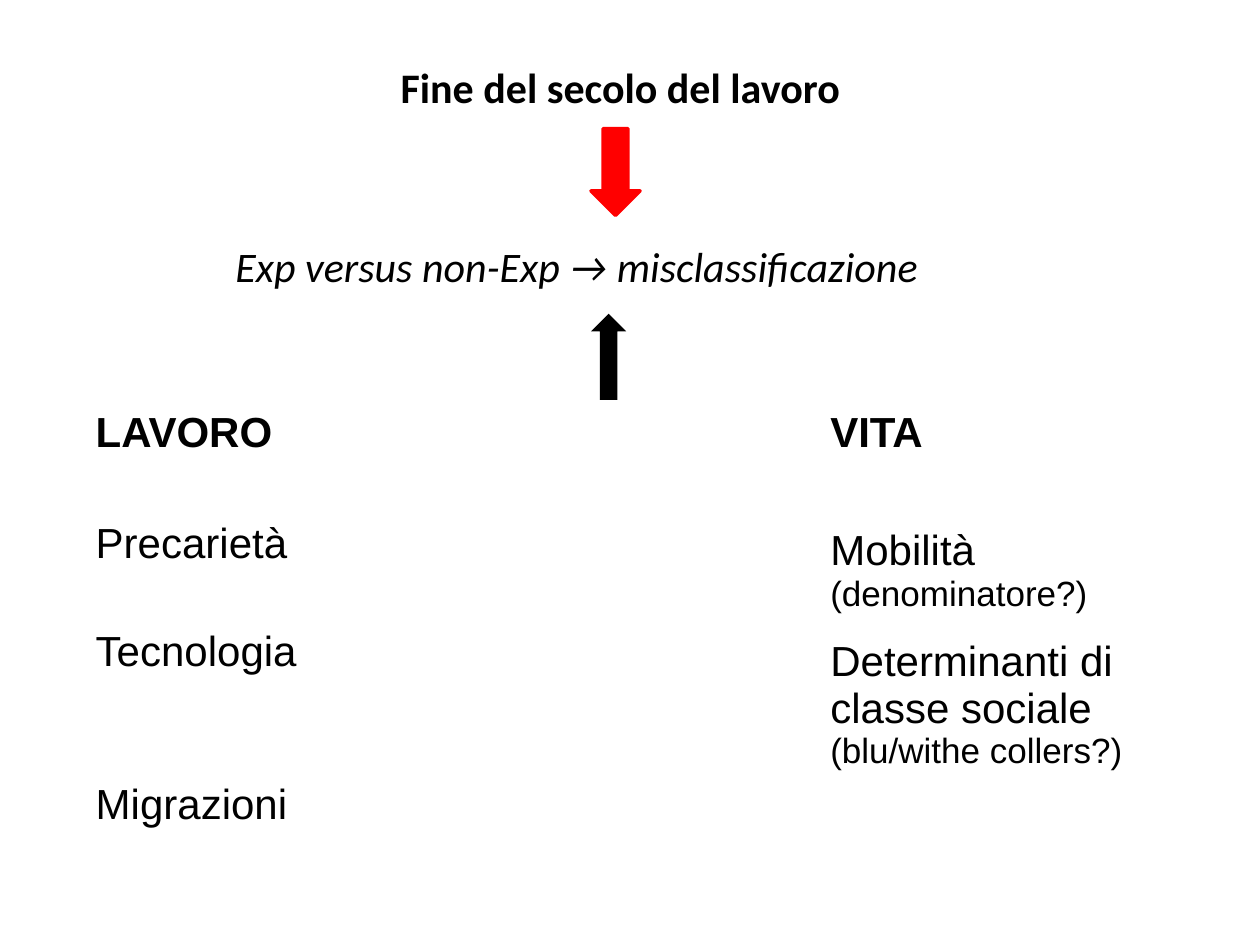
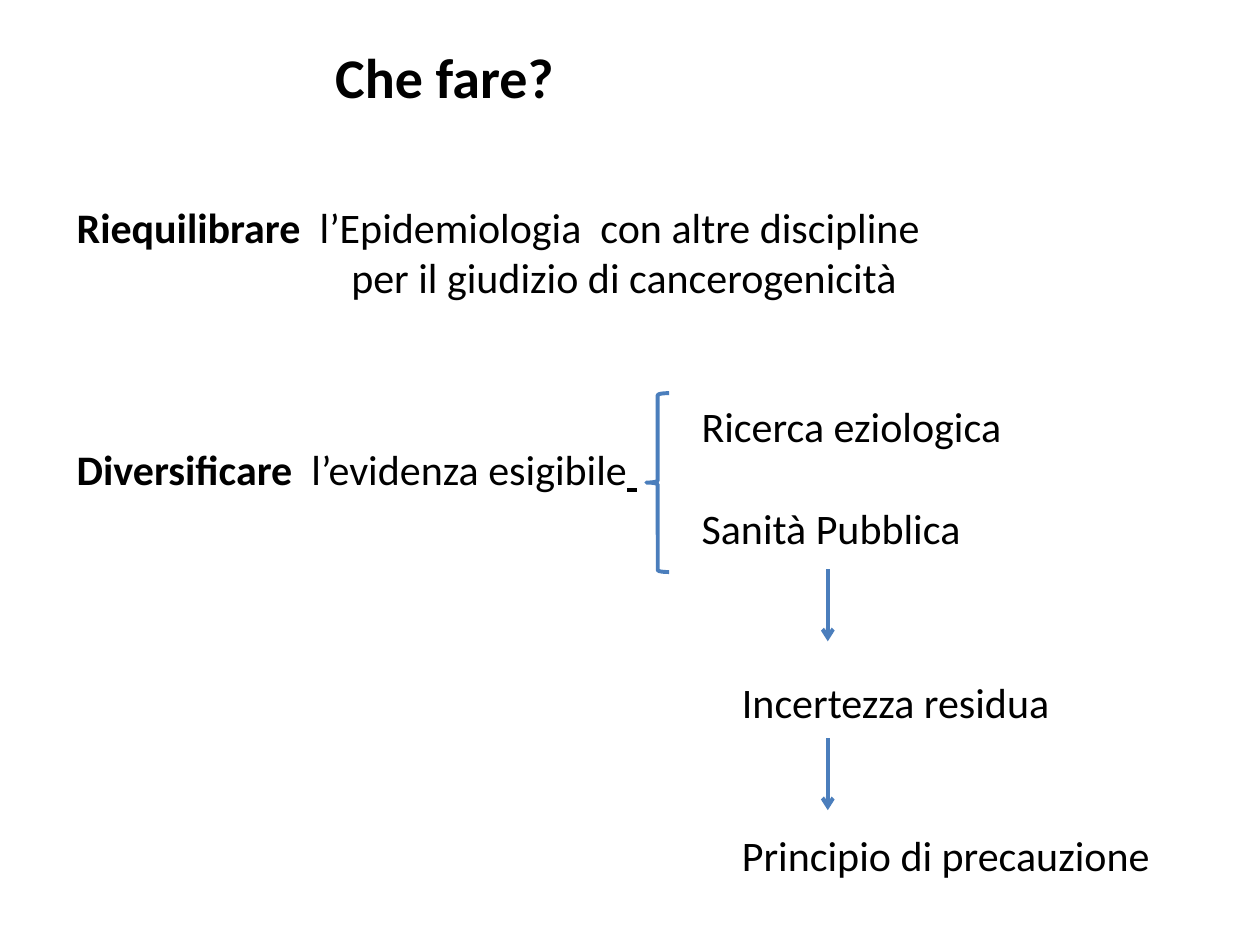
from typing import NamedTuple

from lxml import etree
from pptx import Presentation
from pptx.dml.color import RGBColor
from pptx.enum import shapes, text
from pptx.oxml import ns
from pptx.util import Inches, Pt

BLACK = RGBColor(0x00, 0x00, 0x00)
RED = RGBColor(0xFF, 0x00, 0x00)
BLUE = RGBColor(0x4B, 0x7E, 0xBC)
BODY, GRID = "Calibri", "Arial"
LINE = 29.3  # height of one body line, in points


class Run(NamedTuple):
    words: str
    size: int = 24
    bold: bool = False
    slant: bool = False
    under: bool = False


class Para(NamedTuple):
    runs: tuple[Run, ...]
    before: float = 0
    indent: float = 0


class Box(NamedTuple):
    left: float
    top: float
    width: float
    height: float
    paras: tuple[Para, ...]
    wrap: bool = True


class Cell(NamedTuple):
    paras: tuple[Para, ...]
    foot: float


def para(*runs: Run, before: float = 0, indent: float = 0) -> Para:
    return Para(runs, before, indent)


def write(frame, paras: tuple[Para, ...], face: str = BODY) -> None:
    for i, item in enumerate(paras):
        line = frame.paragraphs[0] if i == 0 else frame.add_paragraph()
        line.alignment = text.PP_ALIGN.LEFT
        line.space_before = Pt(item.before)
        if item.indent:
            props = line._p.get_or_add_pPr()
            props.set("marL", str(Inches(item.indent)))
            props.set("indent", "0")
        for part in item.runs:
            run = line.add_run()
            run.text = part.words
            font = run.font
            font.name, font.size = face, Pt(part.size)
            font.bold, font.italic = part.bold, part.slant
            font.underline = part.under
            font.color.rgb = BLACK


def fill_box(shape, box: Box) -> None:
    shape.left, shape.top = Inches(box.left), Inches(box.top)
    shape.width, shape.height = Inches(box.width), Inches(box.height)
    frame = shape.text_frame
    frame.word_wrap = box.wrap
    frame.auto_size = text.MSO_AUTO_SIZE.NONE
    frame.vertical_anchor = text.MSO_ANCHOR.TOP
    write(frame, box.paras)


def add_page(deck, title: Box, boxes: tuple[Box, ...]):
    page = deck.slides.add_slide(deck.slide_layouts[5])
    fill_box(page.shapes.title, title)
    for box in boxes:
        fill_box(page.shapes.add_textbox(0, 0, 0, 0), box)
    return page


def add_mark(page, kind, left: float, top: float, width: float, height: float):
    mark = page.shapes.add_shape(
        kind, Inches(left), Inches(top), Inches(width), Inches(height))
    mark.shadow.inherit = False
    return mark


def add_block(page, left: float, top: float, width: float, height: float,
              tint: RGBColor, edge: float = 0, turn: int = 0) -> None:
    block = add_mark(page, shapes.MSO_SHAPE.DOWN_ARROW, left, top, width, height)
    block.rotation = turn
    block.fill.solid()
    block.fill.fore_color.rgb = tint
    if edge:
        block.line.color.rgb = tint
        block.line.width = Pt(edge)
    else:
        block.line.fill.background()


def add_arrow(page, x: float, top: float, drop: float) -> None:
    arrow = page.shapes.add_connector(
        shapes.MSO_CONNECTOR.STRAIGHT,
        Inches(x), Inches(top), Inches(x), Inches(top + drop))
    arrow.line.color.rgb = BLUE
    arrow.line.width = Pt(2.25)
    etree.SubElement(arrow.line._get_or_add_ln(), ns.qn("a:tailEnd"), type="arrow")
    etree.SubElement(arrow._element.spPr, ns.qn("a:effectLst"))


def add_grid(page, left: float, top: float, cols: tuple[float, ...],
             rows: tuple[float, ...], cells: tuple[tuple[Cell, ...], ...]) -> None:
    grid = page.shapes.add_table(
        len(rows), len(cols), Inches(left), Inches(top),
        Inches(sum(cols)), Inches(sum(rows))).table
    grid.first_row = grid.horz_banding = False
    for col, width in zip(grid.columns, cols):
        col.width = Inches(width)
    for row, height, items in zip(grid.rows, rows, cells):
        row.height = Inches(height)
        for cell, item in zip(row.cells, items):
            cell.fill.background()
            cell.vertical_anchor = text.MSO_ANCHOR.BOTTOM
            cell.margin_left = cell.margin_right = cell.margin_top = Inches(0.01)
            cell.margin_bottom = Inches(item.foot)
            write(cell.text_frame, item.paras, GRID)


# Work and life: what blurs the exposure classes
def work_page(deck) -> None:
    title = Box(3.08, 0.44, 3.69, 0.5,
                (para(Run("Fine del secolo del lavoro", bold=True)),), False)
    claim = Box(1.77, 1.86, 6.46, 0.5,
                (para(Run("Exp versus non-Exp → misclassificazione", slant=True)),))
    page = add_page(deck, title, (claim,))
    add_block(page, 4.69, 1.02, 0.39, 0.69, RED, edge=2)
    add_block(page, 4.69, 2.49, 0.28, 0.69, BLACK, turn=180)
    cells = (
        (Cell((para(Run("LAVORO", bold=True)),), 0.12),
         Cell((para(Run("VITA", bold=True)),), 0.12)),
        (Cell((para(Run("Precarietà")),), 0.46),
         Cell((para(Run("Mobilità")), para(Run("(denominatore?)", 20))), 0.09)),
        (Cell((para(Run("Tecnologia")),), 0.83),
         Cell((para(Run("Determinanti di classe sociale "),
                    Run("(blu/withe collers?)", 20)),), 0.07)),
        (Cell((para(Run("Migrazioni")),), 0.37), Cell((), 0)),
    )
    add_grid(page, 0.75, 3.18, (5.83, 3.11), (0.56, 1.22, 1.23, 0.73), cells)


# What to do: rebalance and diversify
def task_page(deck) -> None:
    title = Box(2.56, 0.29, 1.95, 0.64,
                (para(Run("Che fare?", 32, bold=True)),), False)
    boxes = (
        Box(0.51, 1.55, 9.49, 0.91, (
            para(Run("Riequilibrare", bold=True),
                 Run("  l’Epidemiologia  con altre discipline")),
            para(Run("per il giudizio di cancerogenicità"), indent=2.18))),
        Box(0.51, 3.47, 9.49, 0.91, (
            para(Run("Diversificare  ", bold=True), Run("l’evidenza esigibile"),
                 Run(" ", under=True)),)),
        Box(5.47, 3.13, 2.6, 1.31, (
            para(Run("Ricerca eziologica")),
            para(Run("Sanità Pubblica"), before=LINE)), False),
        Box(5.79, 5.32, 3.47, 1.72, (
            para(Run("Incertezza residua")),
            para(Run("Principio di precauzione"), before=2 * LINE)), False),
    )
    page = add_page(deck, title, boxes)
    brace = add_mark(page, shapes.MSO_SHAPE.LEFT_BRACE, 5.13, 3.12, 0.18, 1.42)
    brace.fill.background()
    brace.line.color.rgb = BLUE
    brace.line.width = Pt(2.25)
    for top in (4.52, 5.86):
        add_arrow(page, 6.57, top, 0.57)


def main() -> None:
    deck = Presentation()
    deck.slide_width, deck.slide_height = Inches(10), Inches(7.5)
    work_page(deck)
    task_page(deck)
    deck.save("out.pptx")


if __name__ == "__main__":
    main()
